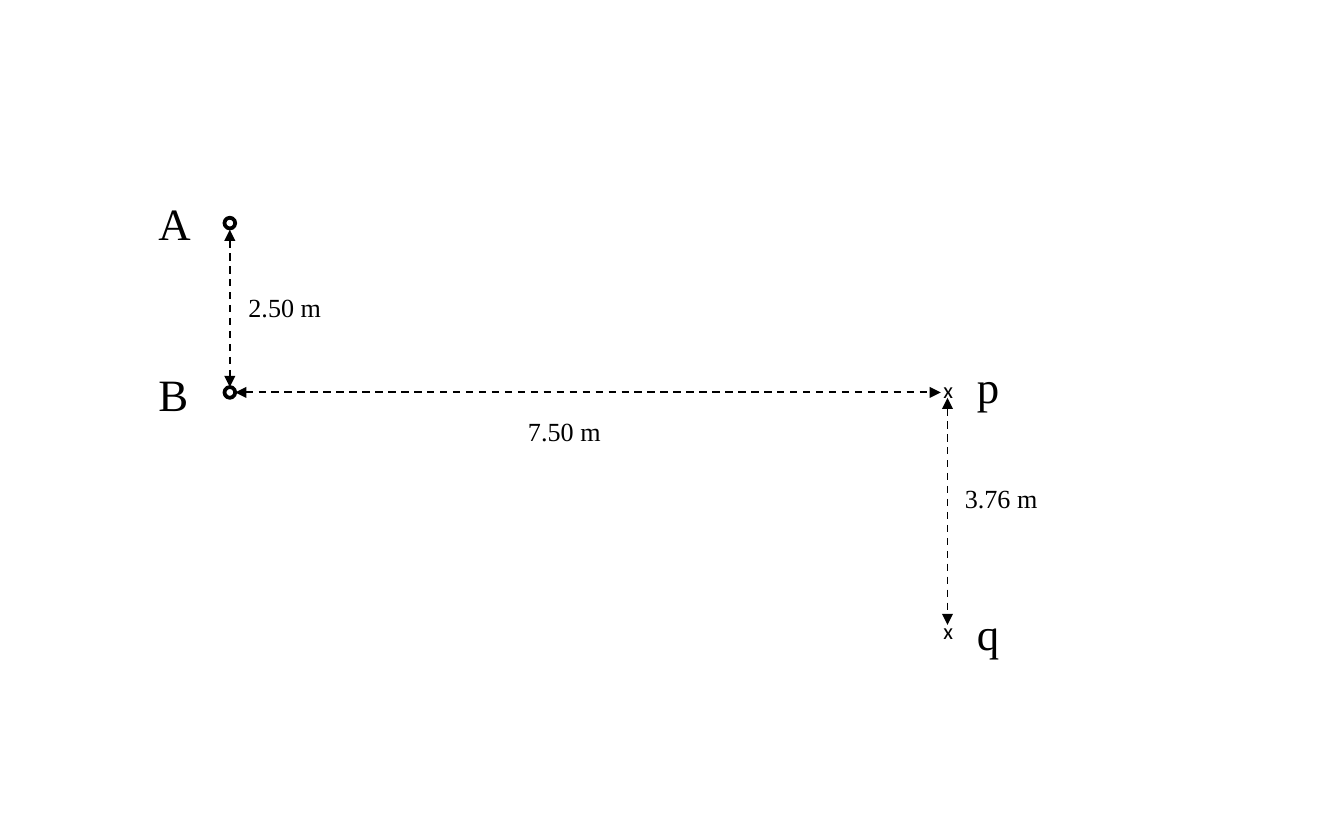
from pptx import Presentation
from pptx.dml.color import RGBColor
from pptx.enum.dml import MSO_LINE
from pptx.enum.shapes import MSO_CONNECTOR, MSO_SHAPE
from pptx.enum.text import MSO_AUTO_SIZE
from pptx.oxml.ns import qn
from pptx.util import Inches, Pt
from lxml import etree

BLACK = RGBColor(0x00, 0x00, 0x00)
WHITE = RGBColor(0xFF, 0xFF, 0xFF)
SERIF = "Times New Roman"
SANS = "Calibri"
DOT_SIZE = 0.08


def add_label(slide, box, text, size, font_name=SERIF):
    left, top, width, height = (Inches(value) for value in box)
    text_box = slide.shapes.add_textbox(left, top, width, height)
    frame = text_box.text_frame
    frame.word_wrap = False
    frame.auto_size = MSO_AUTO_SIZE.SHAPE_TO_FIT_TEXT
    run = frame.paragraphs[0].add_run()
    run.text = text
    run.font.size = Pt(size)
    run.font.name = font_name
    run.font.color.rgb = BLACK


def add_dimension(slide, start, end, text, label_left, label_top):
    """Dashed double arrow with its distance."""
    connector = slide.shapes.add_connector(
        MSO_CONNECTOR.STRAIGHT, *(Inches(value) for value in start + end))
    connector.line.color.rgb = BLACK
    connector.line.width = Pt(1)
    connector.line.dash_style = MSO_LINE.DASH
    properties = connector.line._get_or_add_ln()
    for tag in ("a:headEnd", "a:tailEnd"):
        etree.SubElement(properties, qn(tag), type="triangle")
    etree.SubElement(connector._element.spPr, qn("a:effectLst"))
    add_label(slide, (label_left, label_top, 0.75, 0.34), text, 14)


def add_source(slide, box, name, name_box):
    """Ring marking a source, with its letter."""
    left, top, width, height = (Inches(value) for value in box)
    ring = slide.shapes.add_shape(MSO_SHAPE.OVAL, left, top, width, height)
    ring.shadow.inherit = False
    ring.fill.solid()
    ring.fill.fore_color.rgb = WHITE
    ring.line.color.rgb = BLACK
    ring.line.width = Pt(2)
    add_label(slide, name_box, name, 24)


def add_point(slide, box, name, name_top):
    """Cross marking a point, with its letter."""
    add_label(slide, box, "x", 12, SANS)
    add_label(slide, (7.17, name_top, 0.37, 0.5), name, 24)


def main():
    presentation = Presentation()
    presentation.slide_width = Inches(10)
    presentation.slide_height = Inches(6.25)
    slide = presentation.slides.add_slide(presentation.slide_layouts[6])

    # Sources on the left
    add_source(slide, (1.67, 1.62, DOT_SIZE, DOT_SIZE), "A", (1.08, 1.41, 0.45, 0.5))
    add_source(slide, (1.67, 2.88, DOT_SIZE, DOT_SIZE), "B", (1.08, 2.68, 0.43, 0.5))

    # Distances
    add_dimension(slide, (1.75, 2.92), (7, 2.92), "7.50 m", 3.83, 3.04)
    add_dimension(slide, (1.71, 1.71), (1.71, 2.88), "2.50 m", 1.75, 2.12)
    add_dimension(slide, (7.05, 2.96), (7.05, 4.65), "3.76 m", 7.08, 3.54)

    # Points on the right
    add_point(slide, (6.92, 2.75, 0.28, 0.3), "p", 2.62)
    add_point(slide, (6.92, 4.54, 0.28, 0.3), "q", 4.46)

    presentation.save("out.pptx")


if __name__ == "__main__":
    main()
